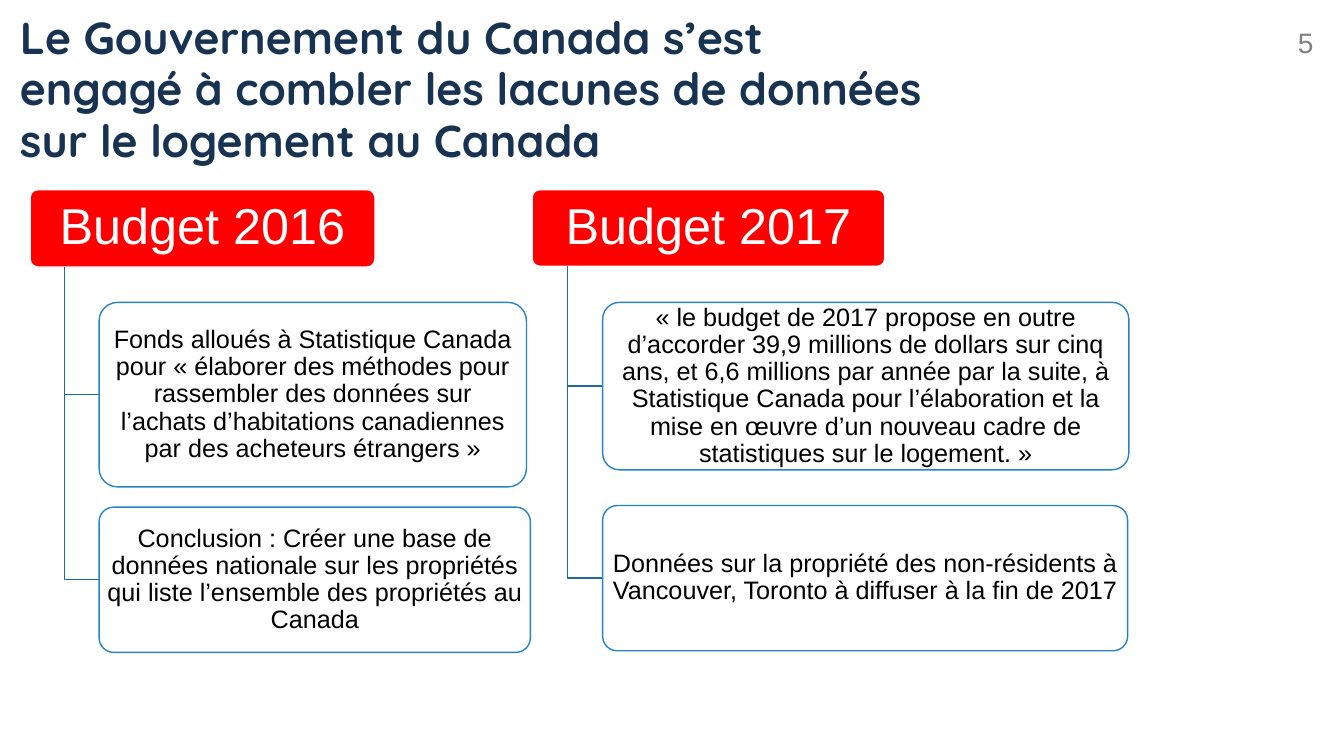
import pptx
import pptx.util
import pptx.dml.color
import pptx.enum.shapes
import pptx.enum.text
import pptx.oxml.ns
from lxml import etree

Cm, Pt = pptx.util.Cm, pptx.util.Pt
ALIGN = pptx.enum.text.PP_ALIGN
ANCHOR = pptx.enum.text.MSO_ANCHOR
ROUNDED = pptx.enum.shapes.MSO_SHAPE.ROUNDED_RECTANGLE

# Content; lengths in cm
TITLE = ("Le Gouvernement du Canada s’est \v"
         "engagé à combler les lacunes de données sur le logement au Canada")
PAGE = "5"
HEADER_TOP = 4.78
BUDGETS = [
    {"name": "Budget 2016", "left": 0.76, "width": 8.69, "height": 1.95,
     "items": [  # top, width, height, text
         (7.62, 10.77, 4.65,
          "Fonds alloués à Statistique Canada pour « élaborer des méthodes pour "
          "rassembler des données sur l’achats d’habitations canadiennes par des "
          "acheteurs étrangers »"),
         (12.78, 10.87, 3.66,
          "Conclusion : Créer une base de données nationale sur les propriétés "
          "qui liste l’ensemble des propriétés au Canada"),
     ]},
    {"name": "Budget 2017", "left": 13.41, "width": 8.89, "height": 1.93,
     "items": [
         (7.62, 13.26, 4.22,
          "« le budget de 2017 propose en outre d’accorder 39,9 millions de dollars "
          "sur cinq ans, et 6,6 millions par année par la suite, à Statistique Canada "
          "pour l’élaboration et la mise en œuvre d’un nouveau cadre de statistiques "
          "sur le logement. »"),
         (12.74, 13.23, 3.66,
          "Données sur la propriété des non-résidents à Vancouver, Toronto à diffuser "
          "à la fin de 2017"),
     ]},
]


def rgb(color):
    return pptx.dml.color.RGBColor.from_string(color)


def style_font(p, name, size, color, bold=False):
    p.font.name, p.font.size, p.font.bold = name, Pt(size), bold
    p.font.color.rgb = rgb(color)


def add_box(left, top, width, height, text, fill, line, size, color, inset):
    sp = slide.shapes.add_shape(ROUNDED, Cm(left), Cm(top), Cm(width), Cm(height))
    sp.shadow.inherit = False
    sp.adjustments[0] = 0.1
    sp.fill.solid()
    sp.fill.fore_color.rgb = rgb(fill)
    sp.line.color.rgb = rgb(line)
    sp.line.width = Pt(1)
    tf = sp.text_frame
    tf.word_wrap = True
    tf.vertical_anchor = ANCHOR.MIDDLE
    tf.margin_left = tf.margin_right = Cm(inset)
    tf.margin_top = tf.margin_bottom = Cm(inset * 0.7)
    p = tf.paragraphs[0]
    p.text = text
    p.alignment = ALIGN.CENTER
    p.line_spacing = 0.9
    style_font(p, "Arial", size, color)
    return sp


def add_elbow(x, top, bottom, right):
    builder = slide.shapes.build_freeform(Cm(x), Cm(top))
    builder.add_line_segments([(Cm(x), Cm(bottom)), (Cm(right), Cm(bottom))], close=False)
    sp = builder.convert_to_shape()
    sp.shadow.inherit = False
    sp.fill.background()
    sp.line.color.rgb = rgb("1E699F")
    sp.line.width = Pt(1)


prs = pptx.Presentation()
prs.slide_width, prs.slide_height = Cm(33.87), Cm(19.05)
slide = prs.slides.add_slide(prs.slide_layouts[5])

# Title
title = slide.shapes.title
title.left, title.top, title.width, title.height = Cm(0.25), Cm(0.2), Cm(24.61), Cm(4.57)
tf = title.text_frame
tf.text = TITLE
tf.word_wrap = True
tf.auto_size = pptx.enum.text.MSO_AUTO_SIZE.NONE
tf.vertical_anchor = ANCHOR.TOP
p = tf.paragraphs[0]
p.alignment = ALIGN.LEFT
p.line_spacing = 0.96
style_font(p, "Quicksand", 32, "183351", bold=True)

# Budget trees: trunk at 10 % and items at 20 % of the header width
for budget in BUDGETS:
    left, width, height = budget["left"], budget["width"], budget["height"]
    add_box(left, HEADER_TOP, width, height, budget["name"],
            "FF0000", "FFFFFF", 36, "FFFFFF", 0.18)
    trunk, item_left = left + 0.1 * width, left + 0.2 * width
    for top, item_width, item_height, text in budget["items"]:
        add_elbow(trunk, HEADER_TOP + height, top + item_height / 2, item_left)
        sp = add_box(item_left, top, item_width, item_height, text,
                     "FFFFFF", "2683C6", 18, "000000", 0.1)
        fill = sp.fill.fore_color._xFill
        etree.SubElement(fill[0], pptx.oxml.ns.qn("a:alpha"), val="90000")

# Page number
sp = slide.shapes.add_textbox(Cm(25.73), Cm(0.53), Cm(7.62), Cm(1.02))
sp.text_frame.word_wrap = True
p = sp.text_frame.paragraphs[0]
p.text = PAGE
p.alignment = ALIGN.RIGHT
style_font(p, "Arial", 20, "808080")

prs.save("out.pptx")
